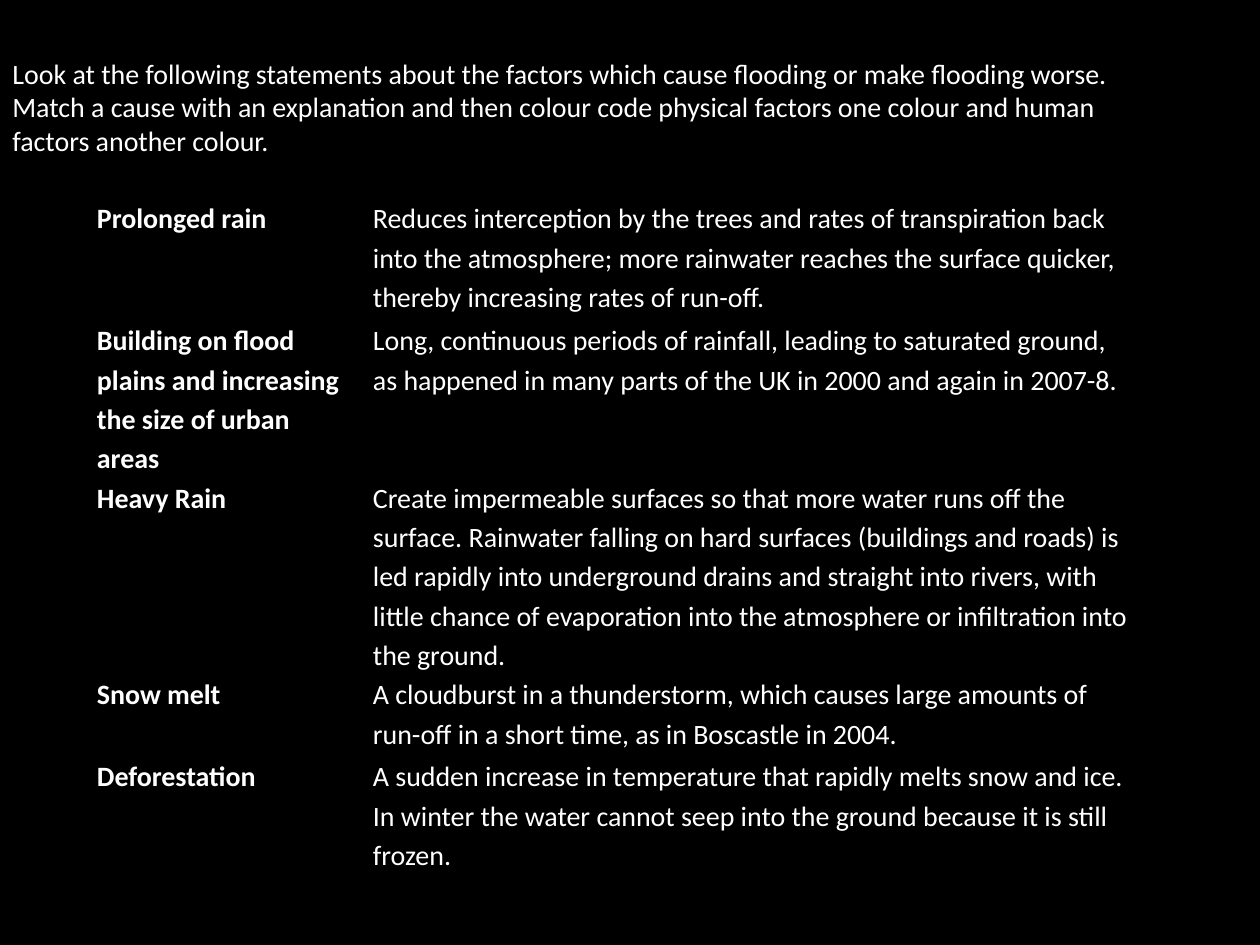
from lxml.etree import SubElement
from pptx import Presentation
from pptx.dml.color import RGBColor
from pptx.enum.text import MSO_ANCHOR
from pptx.oxml.ns import qn
from pptx.util import Emu, Pt

PX_PER_INCH = 126
COLOURS = {"background": "000000", "text": "FFFFFF", "border": "000000"}
FONT = "Calibri"

INSTRUCTIONS = [
    "Look at the following statements about the factors which cause flooding or make flooding worse.",
    "Match a cause with an explanation and then colour code physical factors one colour and human "
    "factors another colour.",
]
# Cause, explanation printed beside it, row height in px
FACTORS = [
    ("Prolonged rain",
     "Reduces interception by the trees and rates of transpiration back into the atmosphere; "
     "more rainwater reaches the surface quicker, thereby increasing rates of run-off.", 122),
    ("Building on flood plains and increasing the size of urban areas",
     "Long, continuous periods of rainfall, leading to saturated ground, as happened in many "
     "parts of the UK in 2000 and again in 2007-8.", 122),
    ("Heavy Rain",
     "Create impermeable surfaces so that more water runs off the surface. Rainwater falling on "
     "hard surfaces (buildings and roads) is led rapidly into underground drains and straight "
     "into rivers, with little chance of evaporation into the atmosphere or infiltration into "
     "the ground.", 163),
    ("Snow melt",
     "A cloudburst in a thunderstorm, which causes large amounts of run-off in a short time, "
     "as in Boscastle in 2004.", 82),
    ("Deforestation",
     "A sudden increase in temperature that rapidly melts snow and ice. In winter the water "
     "cannot seep into the ground because it is still frozen.", 82),
]


def px(length):
    return Emu(round(length * 914400 / PX_PER_INCH))


def colour(name):
    return RGBColor.from_string(COLOURS[name])


def write(frame, paragraphs, size=16, bold=False, spacing=None):
    frame.word_wrap = True
    for index, text in enumerate(paragraphs):
        paragraph = frame.paragraphs[0] if index == 0 else frame.add_paragraph()
        paragraph.line_spacing = spacing
        run = paragraph.add_run()
        run.text = text
        run.font.name = FONT
        run.font.size = Pt(size)
        run.font.bold = bold
        run.font.color.rgb = colour("text")


def add_borders(cell, width=1):
    properties = cell._tc.get_or_add_tcPr()
    for side in ("lnL", "lnR", "lnT", "lnB"):
        line = SubElement(properties, qn(f"a:{side}"), w=str(Pt(width)))
        fill = SubElement(line, qn("a:solidFill"))
        SubElement(fill, qn("a:srgbClr"), val=COLOURS["border"])


def add_instructions(slide, left, top, width, height):
    box = slide.shapes.add_textbox(px(left), px(top), px(width), px(height))
    box.text_frame.vertical_anchor = MSO_ANCHOR.MIDDLE
    write(box.text_frame, INSTRUCTIONS)


def add_factor_table(slide, left, top, width, cause_width):
    height = sum(row_height for *_, row_height in FACTORS)
    table = slide.shapes.add_table(
        len(FACTORS), 2, px(left), px(top), px(width), px(height)).table
    table.first_row = table.horz_banding = False
    table.columns[0].width = px(cause_width)
    table.columns[1].width = px(width - cause_width)
    for row, (cause, explanation, row_height) in zip(table.rows, FACTORS):
        row.height = px(row_height)
        for cell, text, bold in zip(row.cells, (cause, explanation), (True, False)):
            cell.margin_left = cell.margin_right = px(9)
            cell.margin_top = cell.margin_bottom = 0
            add_borders(cell)
            cell.fill.background()
            write(cell.text_frame, [text], bold=bold, spacing=1.15)


def main():
    presentation = Presentation()
    presentation.slide_width, presentation.slide_height = px(1260), px(945)
    slide = presentation.slides.add_slide(presentation.slide_layouts[6])
    slide.background.fill.solid()
    slide.background.fill.fore_color.rgb = colour("background")
    add_factor_table(slide, left=88, top=197, width=1053, cause_width=276)
    add_instructions(slide, left=0, top=49, width=1191, height=115)
    presentation.save("out.pptx")


if __name__ == "__main__":
    main()
